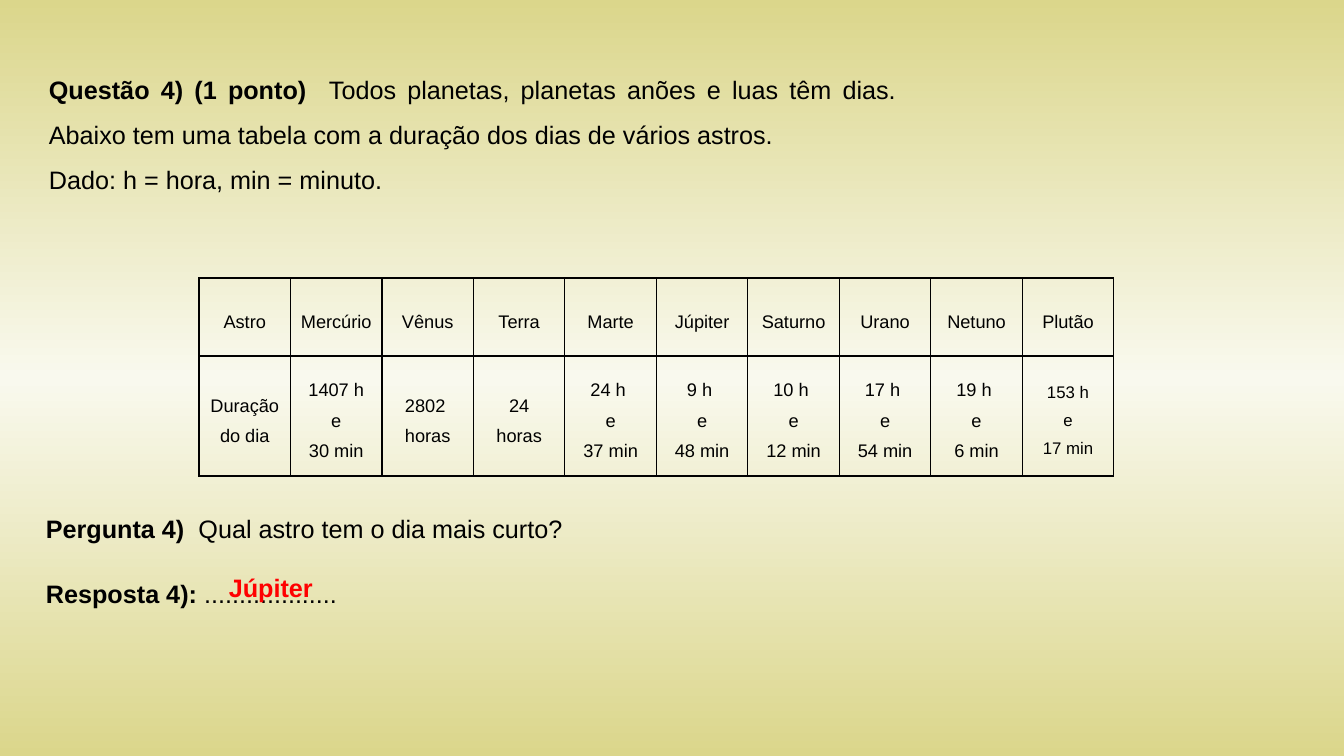
from copy import deepcopy

from lxml.etree import SubElement
from pptx import Presentation
from pptx.dml.color import RGBColor
from pptx.enum.text import MSO_ANCHOR as Anchor, MSO_AUTO_SIZE as AutoSize, PP_ALIGN as Align
from pptx.oxml.ns import qn
from pptx.util import Pt

EMU_PER_PX = 914400 / 100.8
BLACK = RGBColor(0x00, 0x00, 0x00)
RED = RGBColor(0xFF, 0x00, 0x00)
OLIVE = RGBColor(0xDB, 0xD6, 0x8B)
CREAM = RGBColor(0xF9, 0xF9, 0xEE)

DAY_LENGTHS = [
    ("Astro", ["Duração", "do dia"]),
    ("Mercúrio", ["1407 h", "e", "30 min"]),
    ("Vênus", ["2802 ", "horas"]),
    ("Terra", ["24", "horas"]),
    ("Marte", ["24 h ", "e", "37 min"]),
    ("Júpiter", ["9 h ", "e", "48 min"]),
    ("Saturno", ["10 h ", "e", "12 min"]),
    ("Urano", ["17 h ", "e", "54 min"]),
    ("Netuno", ["19 h ", "e", "6 min"]),
    ("Plutão", ["153 h", "e", "17 min"]),
]


def px(length):
    """Turn pixels into EMU."""
    return round(length * EMU_PER_PX)


def write_text(frame, paragraphs, size=18, color=BLACK, align=None, spacing=None):
    """Fill a frame with paragraphs, each a list of (text, bold) runs."""
    for index, runs in enumerate(paragraphs):
        paragraph = frame.add_paragraph() if index else frame.paragraphs[0]
        paragraph.alignment = align
        paragraph.line_spacing = spacing
        for text, bold in runs:
            run = paragraph.add_run()
            run.text = text
            run.font.name = "Arial"
            run.font.size = Pt(size)
            run.font.bold = bold
            run.font.color.rgb = color


def add_text(slide, box, paragraphs, wrap=True, **text_format):
    """Add a text box at box (left, top, width, height)."""
    frame = slide.shapes.add_textbox(*map(px, box)).text_frame
    frame.word_wrap = wrap
    frame.auto_size = AutoSize.SHAPE_TO_FIT_TEXT
    write_text(frame, paragraphs, **text_format)


def paint_background(slide):
    """Fill the background with a vertical olive-cream-olive gradient."""
    fill = slide.background.fill
    fill.gradient()
    fill.gradient_angle = 270
    first = fill.gradient_stops[0]
    stop_list = slide.background._cSld.find(".//" + qn("a:gsLst"))
    stop_list.insert(1, deepcopy(stop_list[0]))
    for stop, position, color in zip(fill.gradient_stops, (0, 0.5, 1), (OLIVE, CREAM, OLIVE)):
        stop.position = position
        stop.color.rgb = color


def add_borders(cell):
    """Draw a black one-point line on each side of a cell."""
    properties = cell._tc.get_or_add_tcPr()
    for side in ("lnL", "lnR", "lnT", "lnB"):
        line = SubElement(properties, qn(f"a:{side}"), w=str(Pt(1)))
        solid = SubElement(line, qn("a:solidFill"))
        SubElement(solid, qn("a:srgbClr"), val=str(BLACK))


def format_cell(cell, lines, size):
    """Write centred lines into a bordered, unfilled cell."""
    add_borders(cell)
    cell.fill.background()
    cell.vertical_anchor = Anchor.MIDDLE
    cell.margin_left = cell.margin_right = px(7)
    cell.margin_top = cell.margin_bottom = 0
    write_text(cell.text_frame, [[(line, False)] for line in lines],
               size=size, align=Align.CENTER, spacing=1.5)


def add_day_table(slide):
    """Add the table of day lengths, one column for each body."""
    frame = slide.shapes.add_table(2, len(DAY_LENGTHS), px(199), px(278), px(915), px(198))
    table = frame.table
    table.first_row = table.horz_banding = False
    for row, height in zip(table.rows, (78, 120)):
        row.height = px(height)
    for column, (body, duration) in enumerate(DAY_LENGTHS):
        format_cell(table.cell(0, column), [body], 13)
        format_cell(table.cell(1, column), duration, 12 if body == "Plutão" else 13)


def main():
    """Build and save the slide."""
    presentation = Presentation()
    presentation.slide_width, presentation.slide_height = px(1344), px(756)
    slide = presentation.slides.add_slide(presentation.slide_layouts[6])
    paint_background(slide)
    add_text(slide, (39, 54, 867, 147), [
        [("Questão 4) (1 ponto)  ", True),
         ("Todos planetas, planetas anões e luas têm dias. "
          "Abaixo tem uma tabela com a duração dos dias de vários astros.", False)],
        [("Dado: h = hora, min = minuto.", False)],
    ], align=Align.JUSTIFY, spacing=1.5)
    add_day_table(slide)
    add_text(slide, (36, 508, 542, 40),
             [[("Pergunta 4)", True), ("  Qual astro tem o dia mais curto?", False)]], wrap=False)
    add_text(slide, (36, 573, 321, 40),
             [[("Resposta 4): ", True), ("." * 19, False)]], wrap=False)
    add_text(slide, (219, 567, 117, 40), [[("Júpiter", True)]], color=RED)
    presentation.save("out.pptx")


if __name__ == "__main__":
    main()
